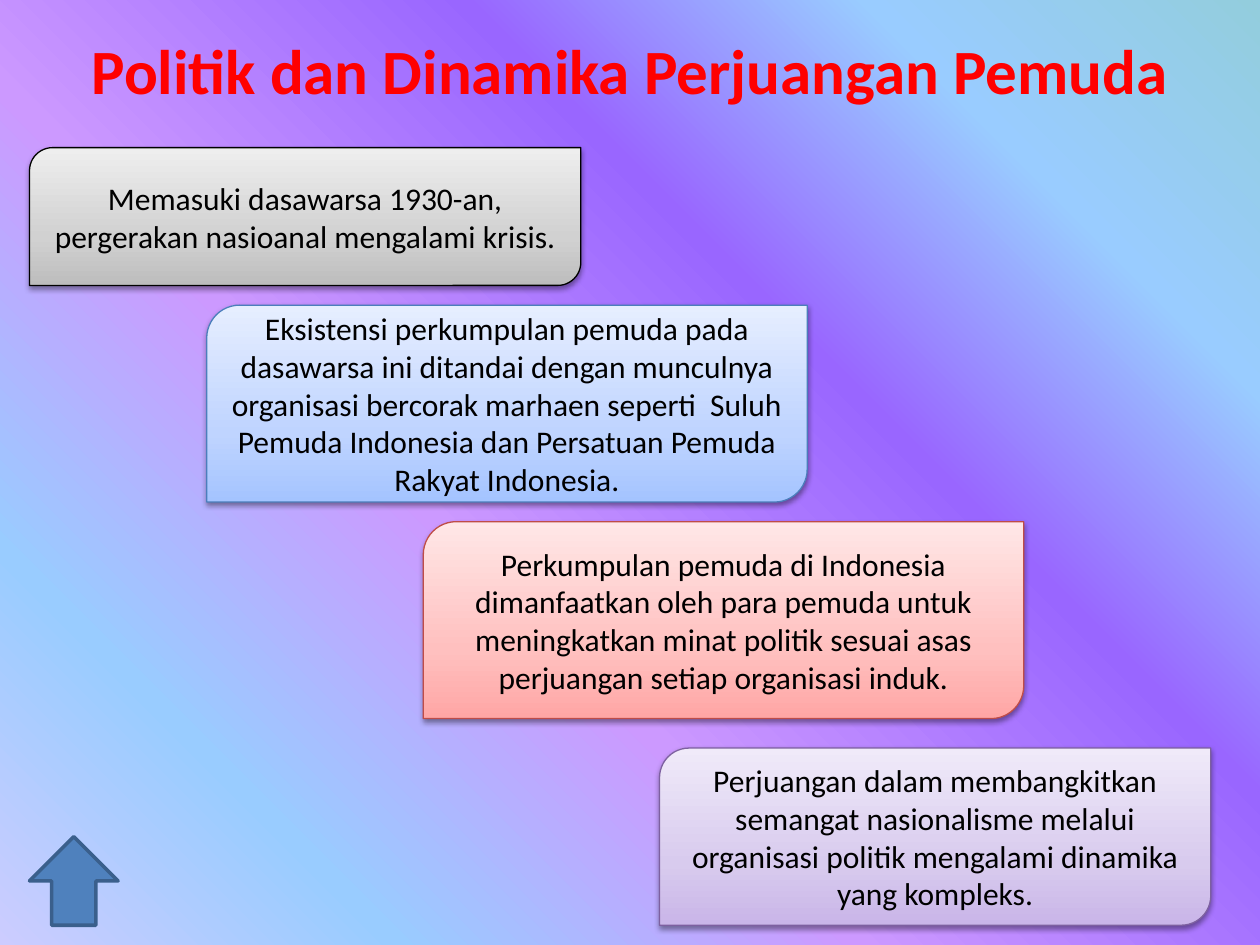
from lxml import etree
from pptx import Presentation
from pptx.dml.color import RGBColor
from pptx.enum import shapes, text
from pptx.oxml.ns import qn
from pptx.util import Pt

FONT = "Calibri"
SKY = [(0, "93CDDD"), (18, "99CCFF"), (36, "9966FF"),
       (61, "CC99FF"), (82, "99CCFF"), (100, "CCCCFF")]
CARD_STOPS = (0, 35, 100)

# left, top, width, height; gradient from bottom to top; line; wording
CARDS = [
    ((16.88, 84.38, 315, 78.75), ("BDBDBD", "D1D1D1", "EEEEEE"), "000000",
     "Memasuki dasawarsa 1930-an, pergerakan nasioanal mengalami krisis."),
    ((118.13, 174.38, 343.13, 112.5), ("A4C4FF", "BFD4FF", "E6EEFF"), "4B7EBC",
     "Eksistensi perkumpulan pemuda pada dasawarsa ini ditandai dengan "
     "munculnya organisasi bercorak marhaen seperti  Suluh Pemuda Indonesia "
     "dan Persatuan Pemuda Rakyat Indonesia."),
    ((241.88, 298.13, 343.13, 112.5), ("FFA6A5", "FFC0BF", "FFE7E7"), "BF4C48",
     "Perkumpulan pemuda di Indonesia dimanfaatkan oleh para pemuda untuk "
     "meningkatkan minat politik sesuai asas perjuangan setiap organisasi induk."),
    ((376.88, 427.5, 315, 101.25), ("C9B5E8", "D8CBEE", "F0EAF9"), "7D60A0",
     "Perjuangan dalam membangkitkan semangat nasionalisme melalui organisasi "
     "politik mengalami dinamika yang kompleks."),
]


def color(value):
    return RGBColor.from_string(value)


def paint_gradient(owner, fill, stops, clockwise):
    """Fill with any number of (percent, colour) stops."""
    fill.gradient()
    fill.gradient_angle = 360 - clockwise
    stop_list = next(owner.iter(qn("a:gsLst")))
    for default_stop in list(stop_list):
        stop_list.remove(default_stop)
    for percent, value in stops:
        stop = etree.SubElement(stop_list, qn("a:gs"), pos=str(percent * 1000))
        etree.SubElement(stop, qn("a:srgbClr"), val=value)


def cast_shadow(shape):
    shape.shadow.inherit = False
    effects = next(shape.element.iter(qn("a:effectLst")))
    outer = etree.SubElement(
        effects, qn("a:outerShdw"), blurRad=str(Pt(3.1)), dist=str(Pt(1.6)),
        dir=str(90 * 60000), rotWithShape="0")
    black = etree.SubElement(outer, qn("a:srgbClr"), val="000000")
    etree.SubElement(black, qn("a:alpha"), val="38000")


def write(frame, wording, size, value, bold=False):
    frame.text = wording
    frame.word_wrap = True
    frame.vertical_anchor = text.MSO_ANCHOR.MIDDLE
    paragraph = frame.paragraphs[0]
    paragraph.alignment = text.PP_ALIGN.CENTER
    font = paragraph.runs[0].font
    font.name, font.size, font.bold = FONT, Pt(size), bold
    font.color.rgb = color(value)


def outline(shape, value, width):
    shape.line.color.rgb = color(value)
    shape.line.width = Pt(width)


def place_title(slide, box):
    title = slide.shapes.title
    title.left, title.top, title.width, title.height = map(Pt, box)
    write(title.text_frame, "Politik dan Dinamika Perjuangan Pemuda",
          36, "FF0000", bold=True)


def add_card(slide, box, gradient, edge, wording):
    card = slide.shapes.add_shape(
        shapes.MSO_SHAPE.ROUND_2_DIAG_RECTANGLE, *map(Pt, box))
    paint_gradient(card.element, card.fill, zip(CARD_STOPS, gradient), 270)
    outline(card, edge, 0.75)
    cast_shadow(card)
    write(card.text_frame, wording, 18, "000000")


def add_up_arrow(slide, box):
    arrow = slide.shapes.add_shape(shapes.MSO_SHAPE.UP_ARROW, *map(Pt, box))
    arrow.shadow.inherit = False
    arrow.fill.solid()
    arrow.fill.fore_color.rgb = color("4F81BD")
    outline(arrow, "3A5F8C", 2)


def main():
    deck = Presentation()
    deck.slide_width, deck.slide_height = Pt(720), Pt(540)
    slide = deck.slides.add_slide(deck.slide_layouts[5])
    paint_gradient(slide.element, slide.background.fill, SKY, 135)
    place_title(slide, (36, -5.63, 648, 90))
    for card in CARDS:
        add_card(slide, *card)
    add_up_arrow(slide, (16.88, 478.13, 50.63, 50.63))
    deck.save("out.pptx")


if __name__ == "__main__":
    main()
